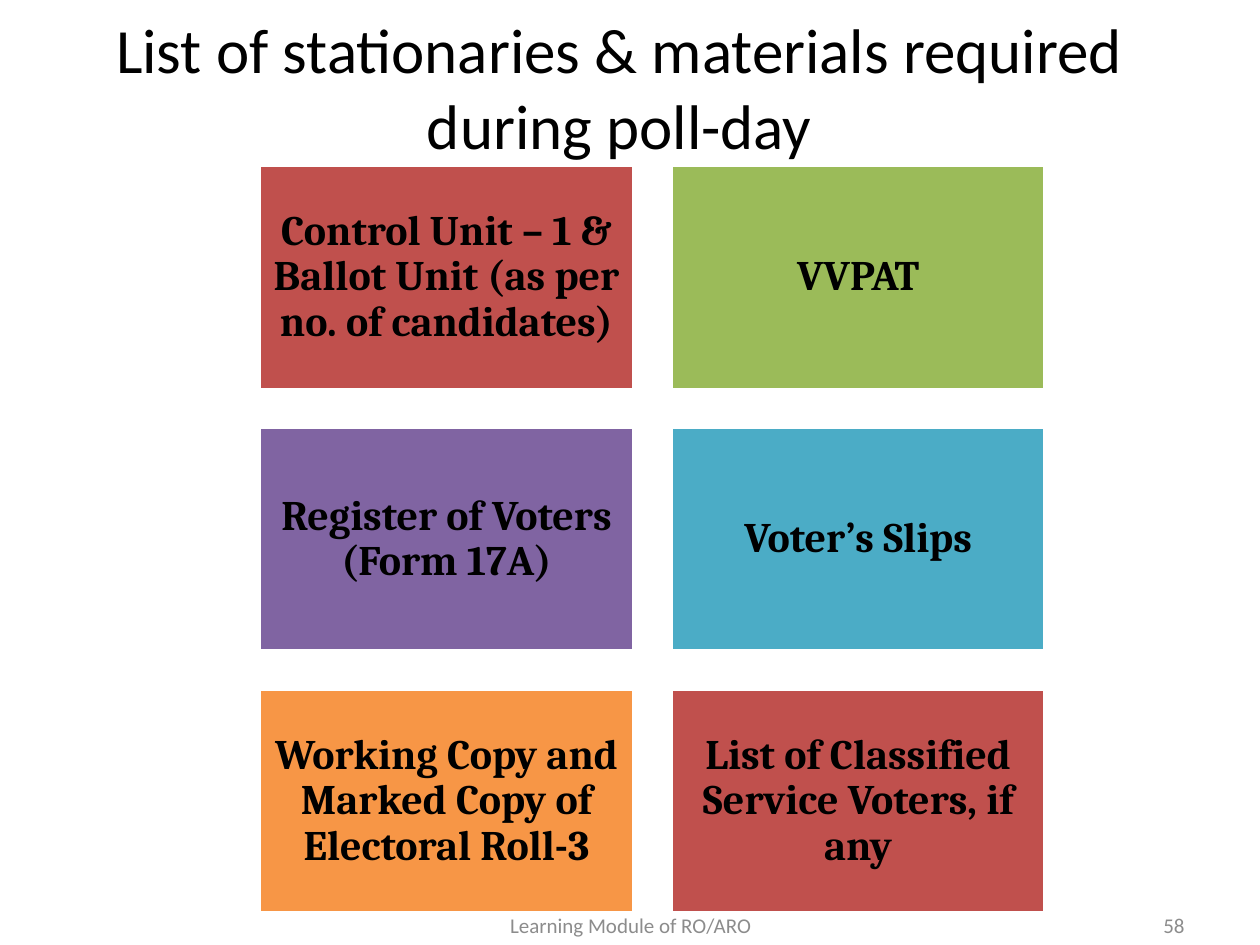
from pptx import Presentation
from pptx.dml.color import RGBColor
from pptx.enum.shapes import MSO_SHAPE
from pptx.enum.text import MSO_ANCHOR, MSO_AUTO_SIZE, PP_ALIGN
from pptx.util import Cm, Pt


def rgb(value):
    return RGBColor.from_string(value)


def write(sp, text, size, font="Calibri", color="000000", bold=False,
          align=PP_ALIGN.CENTER, spacing=None, inset=0.25):
    tf = sp.text_frame
    tf.word_wrap = True
    tf.auto_size = MSO_AUTO_SIZE.NONE
    tf.vertical_anchor = MSO_ANCHOR.MIDDLE
    tf.margin_left = tf.margin_right = Cm(inset)
    tf.margin_top = tf.margin_bottom = Cm(min(inset, 0.25))
    p = tf.paragraphs[0]
    p.alignment = align
    p.line_spacing = spacing
    r = p.add_run()
    r.text = text
    r.font.size = Pt(size)
    r.font.name = font
    r.font.bold = bold
    r.font.color.rgb = rgb(color)


prs = Presentation()
prs.slide_width, prs.slide_height = Cm(25.4), Cm(19.05)
s = prs.slides.add_slide(prs.slide_layouts[5])

title = s.shapes.title
title.left, title.top, title.width, title.height = Cm(1.27), Cm(0.76), Cm(22.43), Cm(1.96)
write(title, "List of stationaries & materials required during poll-day", 36)

footers = [
    ("Learning Module of RO/ARO", 8.69, 8.05, PP_ALIGN.CENTER),
    ("58", 18.21, 5.92, PP_ALIGN.RIGHT),
]
for text, left, width, align in footers:
    sp = s.shapes.add_textbox(Cm(left), Cm(18.14), Cm(width), Cm(1.02))
    write(sp, text, 12, color="8C8C8C", align=align)

materials = [
    ("Control Unit – 1 & Ballot Unit (as per no. of candidates)", "C0504D"),
    ("VVPAT", "9BBB59"),
    ("Register of Voters (Form 17A)", "8064A2"),
    ("Voter’s Slips", "4BACC6"),
    ("Working Copy and Marked Copy of Electoral Roll-3", "F79646"),
    ("List of Classified Service Voters, if any", "C0504D"),
]
left, top, width, height, gap = 5.23, 3.33, 7.54, 4.52, 0.76
grid = s.shapes.add_group_shape()
for i, (text, color) in enumerate(materials):
    row, col = divmod(i, 2)
    sp = grid.shapes.add_shape(
        MSO_SHAPE.RECTANGLE,
        Cm(left + col * (width + gap)), Cm(top + row * (height + gap)),
        Cm(width), Cm(height))
    sp.shadow.inherit = False
    sp.fill.solid()
    sp.fill.fore_color.rgb = rgb(color)
    sp.line.color.rgb = rgb("FFFFFF")
    sp.line.width = Pt(2)
    write(sp, text, 24, font="Cambria", bold=True, spacing=0.9)

prs.save("out.pptx")
